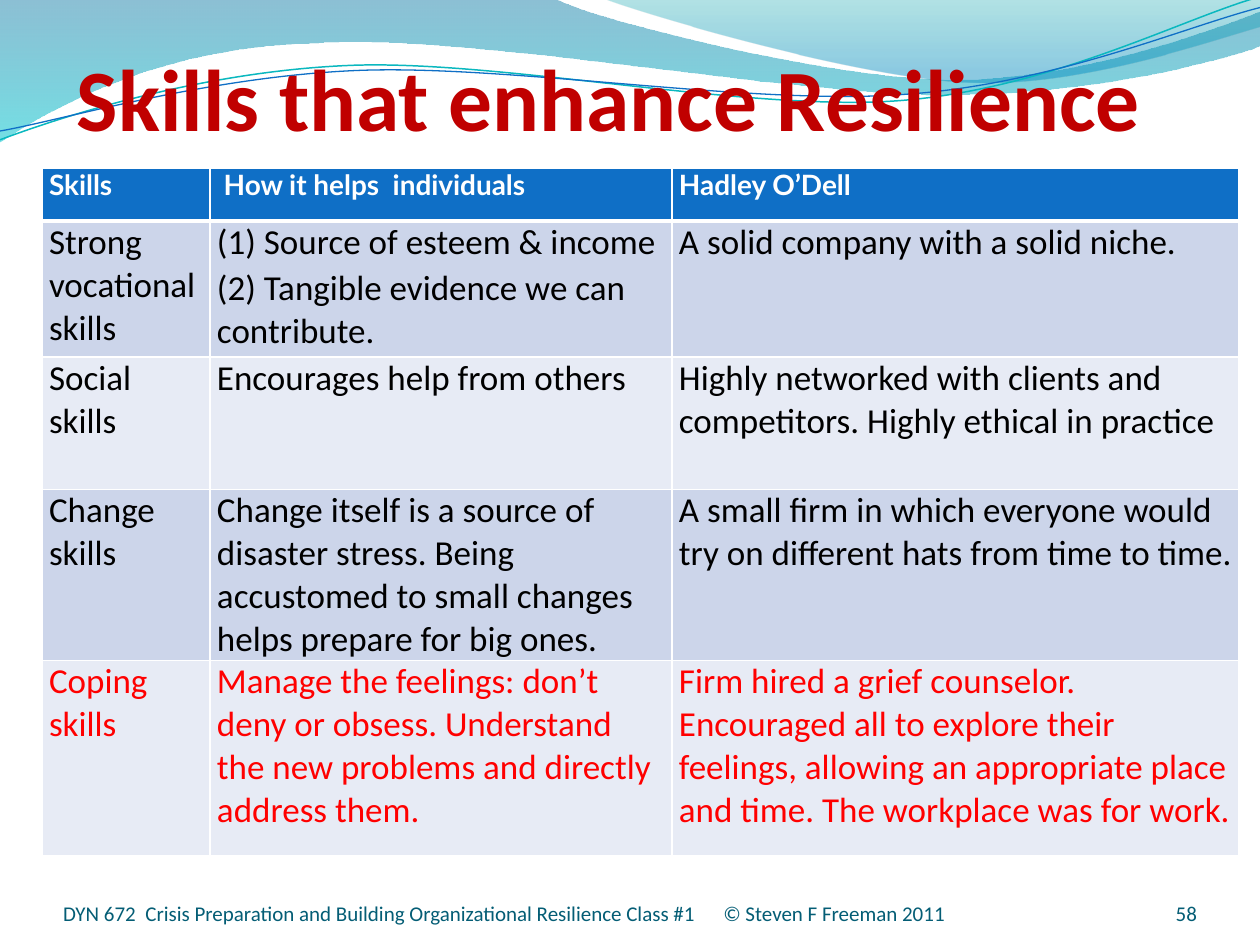
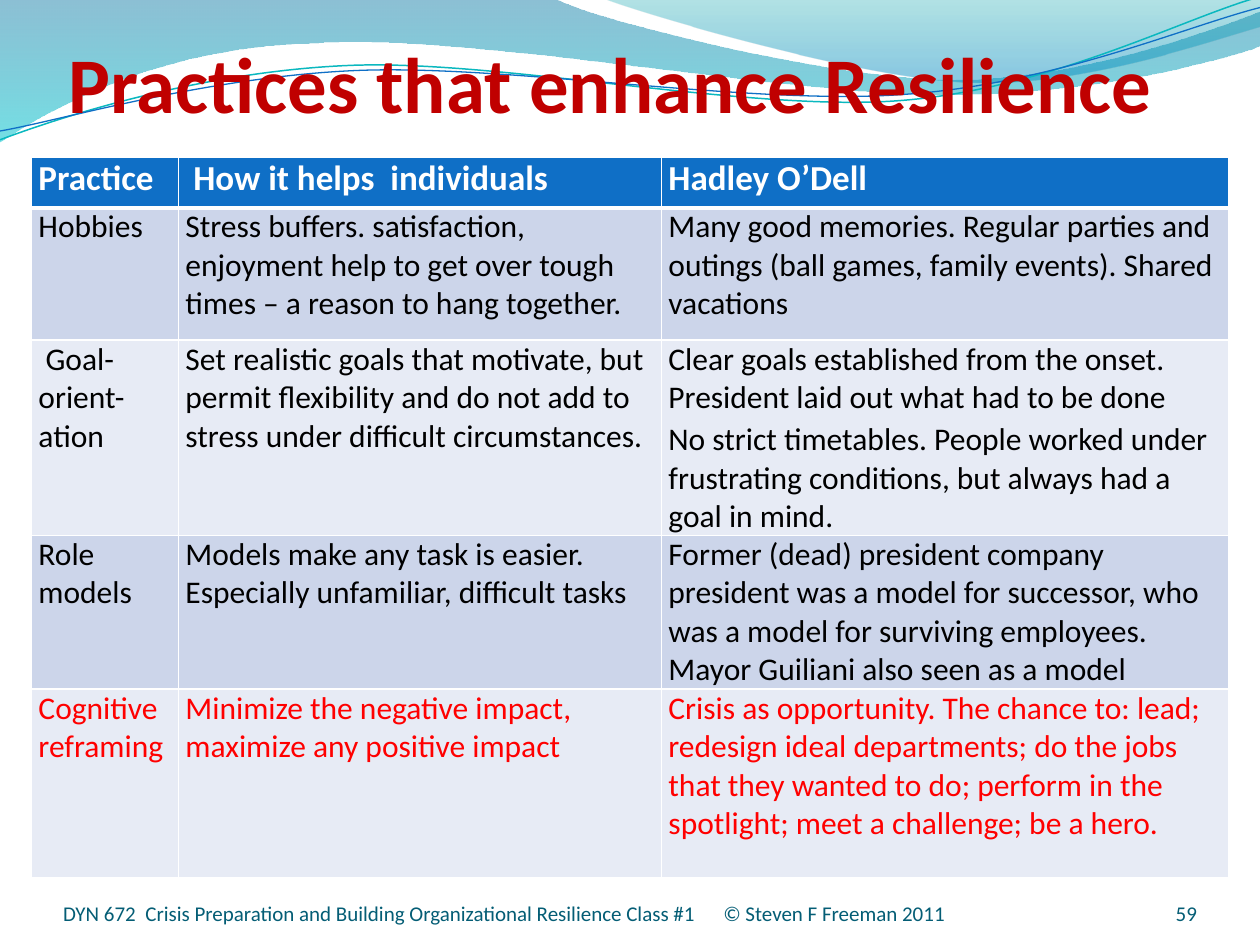
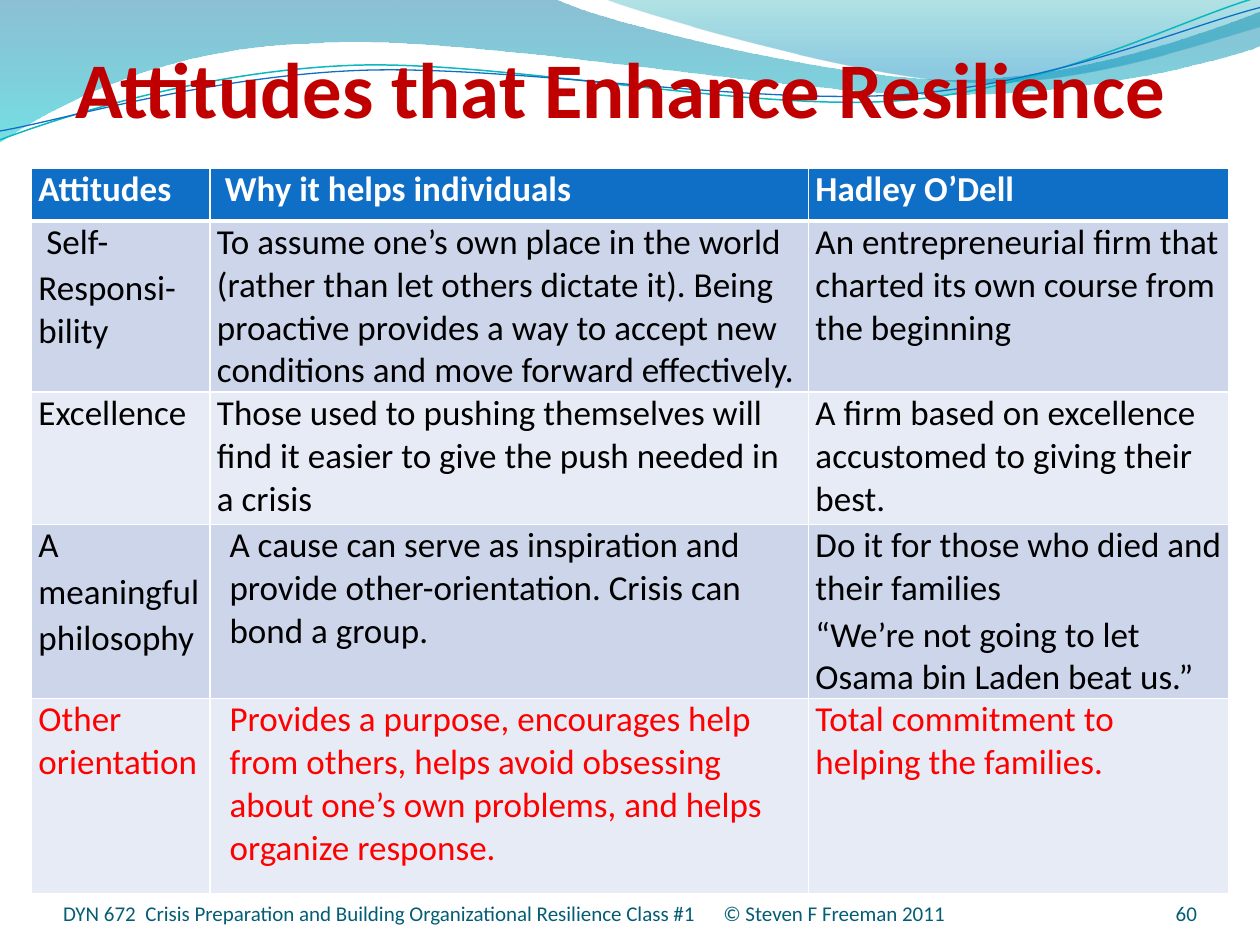
from dataclasses import dataclass

from lxml.etree import SubElement
from pptx import Presentation
from pptx.dml.color import RGBColor
from pptx.enum.text import MSO_ANCHOR as Anchor, PP_ALIGN as Align
from pptx.oxml import parse_xml
from pptx.oxml.ns import nsdecls, qn
from pptx.util import Inches, Pt

SLIDE_SIZE = (10, 7.5)
FONT = "Calibri"
WHITE, BLACK, RED = "FFFFFF", "000000", "FF0000"
TITLE_COLOR, HEADER_BLUE, FOOTER_TEAL = "C00000", "0F6FC6", "045D75"
BAND_FILLS = ("CCD5EA", "E7EBF5")
CELL_MARGINS = {
    "margin_left": Inches(1 / 18), "margin_right": Inches(1 / 18),
    "margin_top": 0, "margin_bottom": 0,
}
PARAGRAPH_GAPS = {"space_before": Pt(1), "space_after": Pt(1)}
HANGING, INDENTED = (0, -0.03), (0.1, 0)
FIRM = "Hadley O’Dell"
COURSE = "DYN 672  Crisis Preparation and Building Organizational Resilience Class #1"
COPYRIGHT = "© Steven F Freeman 2011"
COPYRIGHT_TAB = 5.24
FOOTER_BOX = (0.5, 6.95, 8.08, 0.4)
NUMBER_BOX = (8.67, 6.95, 0.83, 0.4)
FIRST_NUMBER = 58

WAVE_BANDS = [
    {
        "outline": [
            (0, 0), (4.4, -0.01),
            (4.76, 0.17, 6.64, 0.63, 7.58, 0.63), (8.53, 0.63, 9.58, 0.26, 10, 0.09),
            (10.01, 0.36),
            (9.83, 0.44, 8.7, 0.76, 7.46, 0.75), (6.22, 0.75, 3.82, 0.28, 2.57, 0.34),
            (1.29, 0.36, 0.46, 0.83, -0.01, 1.13),
        ],
        "stops": [(0, "0074A1", 45), (1, "00C6CF", 55)],
    },
    {
        "outline": [
            (4.79, -0.01),
            (5.09, 0.11, 6.82, 0.62, 7.69, 0.65), (8.56, 0.69, 9.61, 0.32, 10, 0.21),
            (10, 0),
        ],
        "stops": [(0, "00A1A9", 30), (0.8, "008BBF", 45)],
    },
]
WAVE_LINES = [
    {
        "outline": [
            (0, 1.11),
            (0.48, 0.93, 1.58, 0.57, 2.77, 0.52), (3.95, 0.47, 5.93, 0.89, 7.13, 0.8),
            (8.33, 0.71, 9.38, 0.15, 9.98, -0.02),
        ],
        "color": "0AB8BF", "width": 0.85,
    },
    {
        "outline": [
            (0, 1.04),
            (0.47, 0.96, 1.64, 0.61, 2.83, 0.56), (4.03, 0.51, 5.97, 0.84, 7.17, 0.75),
            (8.36, 0.67, 9.41, 0.21, 10, 0.06),
        ],
        "color": HEADER_BLUE, "width": 0.75,
    },
]


@dataclass
class Topic:
    """Content and measures of one resilience slide."""
    title: str
    title_box: tuple
    title_size: int
    table_corner: tuple
    columns: tuple
    row_heights: tuple
    rows: list
    body_size: int = 20
    header_size: int = 20
    header_font: str = FONT
    indented_cells: tuple = ()


TOPICS = [
    Topic(
        title="Skills that enhance Resilience ",
        title_box=(0.25, 0.25, 9.33, 0.98), title_size=50,
        table_corner=(1 / 3, 4 / 3), columns=(4 / 3, 11 / 3, 4.5),
        row_heights=(0.42, 1.08, 1.05, 1.36, 1.55),
        header_size=16, header_font="Lato",
        rows=[
            ("Skills", " How it helps  individuals", FIRM),
            ("Strong vocational skills",
             "(1) Source of esteem & income\n(2) Tangible evidence we can contribute.",
             "A solid company with a solid niche."),
            ("Social skills", "Encourages help from others",
             "Highly networked with clients and competitors. Highly ethical in practice"),
            ("Change skills",
             "Change itself is a source of disaster stress. Being accustomed to small "
             "changes helps prepare for big ones.",
             "A small firm in which everyone would try on different hats from time to time."),
            ("Coping skills",
             "Manage the feelings: don’t deny or obsess. Understand the new problems "
             "and directly address them.",
             "Firm hired a grief counselor. Encouraged all to explore their feelings, "
             "allowing an appropriate place and time. The workplace was for work."),
        ],
    ),
    Topic(
        title="Practices that enhance Resilience ",
        title_box=(0.25, 0.17, 9.33, 0.92), title_size=45,
        table_corner=(0.25, 1.25), columns=(7 / 6, 23 / 6, 4.5),
        row_heights=(0.4, 1.05, 1.55, 1.22, 1.5), body_size=18,
        rows=[
            ("Practice", " How it helps  individuals", FIRM),
            ("Hobbies",
             "Stress buffers. satisfaction, enjoyment help to get over tough times – "
             "a reason to hang together.",
             "Many good memories. Regular parties and outings (ball games, family "
             "events). Shared vacations"),
            (" Goal-orient-ation",
             "Set realistic goals that motivate, but permit flexibility and do not add "
             "to stress under difficult circumstances.",
             "Clear goals established from the onset. President laid out what had to be "
             "done\nNo strict timetables. People worked under frustrating conditions, "
             "but always had a goal in mind."),
            ("Role models",
             "Models make any task is easier. Especially unfamiliar, difficult tasks",
             "Former (dead) president company president was a model for successor, who "
             "was a model for surviving employees. Mayor Guiliani also seen as a model"),
            ("Cognitive reframing",
             "Minimize the negative impact, maximize any positive impact",
             "Crisis as opportunity. The chance to: lead; redesign ideal departments; "
             "do the jobs that they wanted to do; perform in the spotlight; meet a "
             "challenge; be a hero."),
        ],
    ),
    Topic(
        title="Attitudes that Enhance Resilience ",
        title_box=(0.33, 0.25, 9.33, 0.83), title_size=45,
        table_corner=(0.25, 4 / 3), columns=(17 / 12, 4.75, 10 / 3),
        row_heights=(0.42, 1.36, 1.05, 1.38, 1.55),
        indented_cells=((3, 1), (4, 1)),
        rows=[
            ("Attitudes", " Why it helps individuals", FIRM),
            (" Self-\nResponsi-bility",
             "To assume one’s own place in the world (rather than let others dictate "
             "it). Being proactive provides a way to accept new conditions and move "
             "forward effectively.",
             "An entrepreneurial firm that charted its own course from the beginning"),
            ("Excellence",
             "Those used to pushing themselves will find it easier to give the push "
             "needed in a crisis",
             "A firm based on excellence accustomed to giving their best."),
            ("A\nmeaningful\nphilosophy",
             "A cause can serve as inspiration and provide other-orientation. Crisis "
             "can bond a group.",
             "Do it for those who died and their families\n“We’re not going to let "
             "Osama bin Laden beat us.”"),
            ("Other orientation",
             "Provides a purpose, encourages help from others, helps avoid obsessing "
             "about one’s own problems, and helps organize response.",
             "Total commitment to helping the families."),
        ],
    ),
]


def rgb(value):
    """Turn a hex string into a colour."""
    return RGBColor.from_string(value)


def apply(target, formats):
    """Set every attribute named in formats on the target."""
    for name, value in formats.items():
        setattr(target, name, value)


def style_font(font, size, color, bold=False, name=FONT):
    """Give a font its face, size, weight and colour."""
    apply(font, {"name": name, "size": Pt(size), "bold": bold})
    font.color.rgb = rgb(color)


def bend(curve, outline):
    """Join the three points of each curved segment into one cubic curve."""
    path = next(curve.element.iter(qn("a:path")))
    corners = iter(path.findall(qn("a:lnTo")))
    for segment in outline[1:]:
        group = [next(corners) for _ in segment[::2]]
        if len(group) == 3:
            bezier = path.makeelement(qn("a:cubicBezTo"))
            group[0].addprevious(bezier)
            for corner in group:
                bezier.append(corner[0])
                path.remove(corner)


def add_outline(slide, outline, close):
    """Draw an outline of corners and cubic curves without shadow."""
    start, *others = [
        (Inches(x), Inches(y))
        for segment in outline for x, y in zip(segment[::2], segment[1::2])
    ]
    builder = slide.shapes.build_freeform(*start)
    builder.add_line_segments(others, close=close)
    curve = builder.convert_to_shape()
    curve.shadow.inherit = False
    bend(curve, outline)
    return curve


def add_wave_band(slide, outline, stops):
    """Draw one translucent band, shaded from top to bottom."""
    band = add_outline(slide, outline, close=True)
    band.line.fill.background()
    band.fill.gradient()
    band.fill.gradient_angle = 270
    for stop, (position, color, _) in zip(band.fill.gradient_stops, stops):
        stop.position = position
        stop.color.rgb = rgb(color)
    for shade, (_, _, opacity) in zip(band.element.iter(qn("a:srgbClr")), stops):
        SubElement(shade, qn("a:alpha"), val=str(opacity * 1000))
    return band


def add_wave_line(slide, outline, color, width):
    """Draw one thin line that follows the wave."""
    thread = add_outline(slide, outline, close=False)
    thread.fill.background()
    thread.line.color.rgb = rgb(color)
    thread.line.width = Pt(width)
    return thread


def move_wave_to_layout(slide, layout):
    """Draw the wave once and hand it to the layout all slides share."""
    tree = layout.shapes.element
    for placeholder in list(layout.placeholders):
        tree.remove(placeholder.element)
    wave = [add_wave_band(slide, **band) for band in WAVE_BANDS]
    wave += [add_wave_line(slide, **line) for line in WAVE_LINES]
    for part in wave:
        tree.append(part.element)


def add_label(slide, box, text, align, anchor, margin_top=0, **font):
    """Place one line of text in a box and return its paragraph."""
    frame = slide.shapes.add_textbox(*map(Inches, box)).text_frame
    apply(frame, {
        "word_wrap": True, "vertical_anchor": anchor, "margin_left": 0,
        "margin_right": 0, "margin_top": Inches(margin_top), "margin_bottom": 0,
    })
    label = frame.paragraphs[0]
    label.alignment = align
    run = label.add_run()
    run.text = text
    style_font(run.font, **font)
    return label


def add_footer(slide, number):
    """Place the course line and the slide number."""
    style = {"anchor": Anchor.BOTTOM, "size": 12, "color": FOOTER_TEAL}
    add_label(slide, NUMBER_BOX, str(number), Align.RIGHT, **style)
    course = add_label(slide, FOOTER_BOX, f"{COURSE}\t{COPYRIGHT}", Align.LEFT, **style)
    tabs = SubElement(course._p.get_or_add_pPr(), qn("a:tabLst"))
    SubElement(tabs, qn("a:tab"), pos=str(Inches(COPYRIGHT_TAB)), algn="l")


def add_borders(cell, top, bottom):
    """Draw white cell borders with the given top and bottom widths."""
    widths = {"lnL": 1, "lnR": 1, "lnT": top, "lnB": bottom}
    properties = cell._tc.get_or_add_tcPr()
    for place, (side, width) in enumerate(widths.items()):
        properties.insert(place, parse_xml(
            f'<a:{side} {nsdecls("a")} w="{Pt(width)}"><a:solidFill>'
            f'<a:srgbClr val="{WHITE}"/></a:solidFill></a:{side}>'
        ))


def fill_cell(cell, text, fill, indent, **font):
    """Write the paragraphs of a cell over its fill."""
    apply(cell, CELL_MARGINS)
    cell.fill.solid()
    cell.fill.fore_color.rgb = rgb(fill)
    cell.text = text
    for paragraph in cell.text_frame.paragraphs:
        apply(paragraph, PARAGRAPH_GAPS)
        properties = paragraph._p.get_or_add_pPr()
        for name, length in zip(("marL", "indent"), indent):
            properties.set(name, str(Inches(length)))
        for run in paragraph.runs:
            style_font(run.font, **font)


def add_topic_table(slide, topic):
    """Build the table with its header, banded rows and red last row."""
    size = (sum(topic.columns), sum(topic.row_heights))
    table = slide.shapes.add_table(
        len(topic.rows), len(topic.columns), *map(Inches, topic.table_corner + size)
    ).table
    table.horz_banding = False
    for column, width in zip(table.columns, topic.columns):
        column.width = Inches(width)
    for row, height in zip(table.rows, topic.row_heights):
        row.height = Inches(height)
    last = len(topic.rows) - 1
    for r, texts in enumerate(topic.rows):
        if r == 0:
            fill = HEADER_BLUE
            font = {"size": topic.header_size, "color": WHITE, "bold": True,
                    "name": topic.header_font}
        else:
            fill = BAND_FILLS[(r - 1) % 2]
            font = {"size": topic.body_size, "color": RED if r == last else BLACK}
        for c, text in enumerate(texts):
            cell = table.cell(r, c)
            indent = INDENTED if (r, c) in topic.indented_cells else HANGING
            fill_cell(cell, text, fill, indent, **font)
            add_borders(cell, top=3 if r == 1 else 1, bottom=3 if r == 0 else 1)


def add_topic_slide(deck, layout, topic, number):
    """Add one slide with its title, table and footer."""
    slide = deck.slides.add_slide(layout)
    add_label(slide, topic.title_box, topic.title, Align.CENTER, Anchor.MIDDLE,
              margin_top=0.05, size=topic.title_size, color=TITLE_COLOR, bold=True)
    add_topic_table(slide, topic)
    add_footer(slide, number)
    return slide


def main():
    """Build the deck and save it."""
    deck = Presentation()
    deck.slide_width, deck.slide_height = map(Inches, SLIDE_SIZE)
    blank = deck.slide_layouts[6]
    slides = [
        add_topic_slide(deck, blank, topic, number)
        for number, topic in enumerate(TOPICS, FIRST_NUMBER)
    ]
    move_wave_to_layout(slides[0], blank)
    deck.save("out.pptx")


if __name__ == "__main__":
    main()
